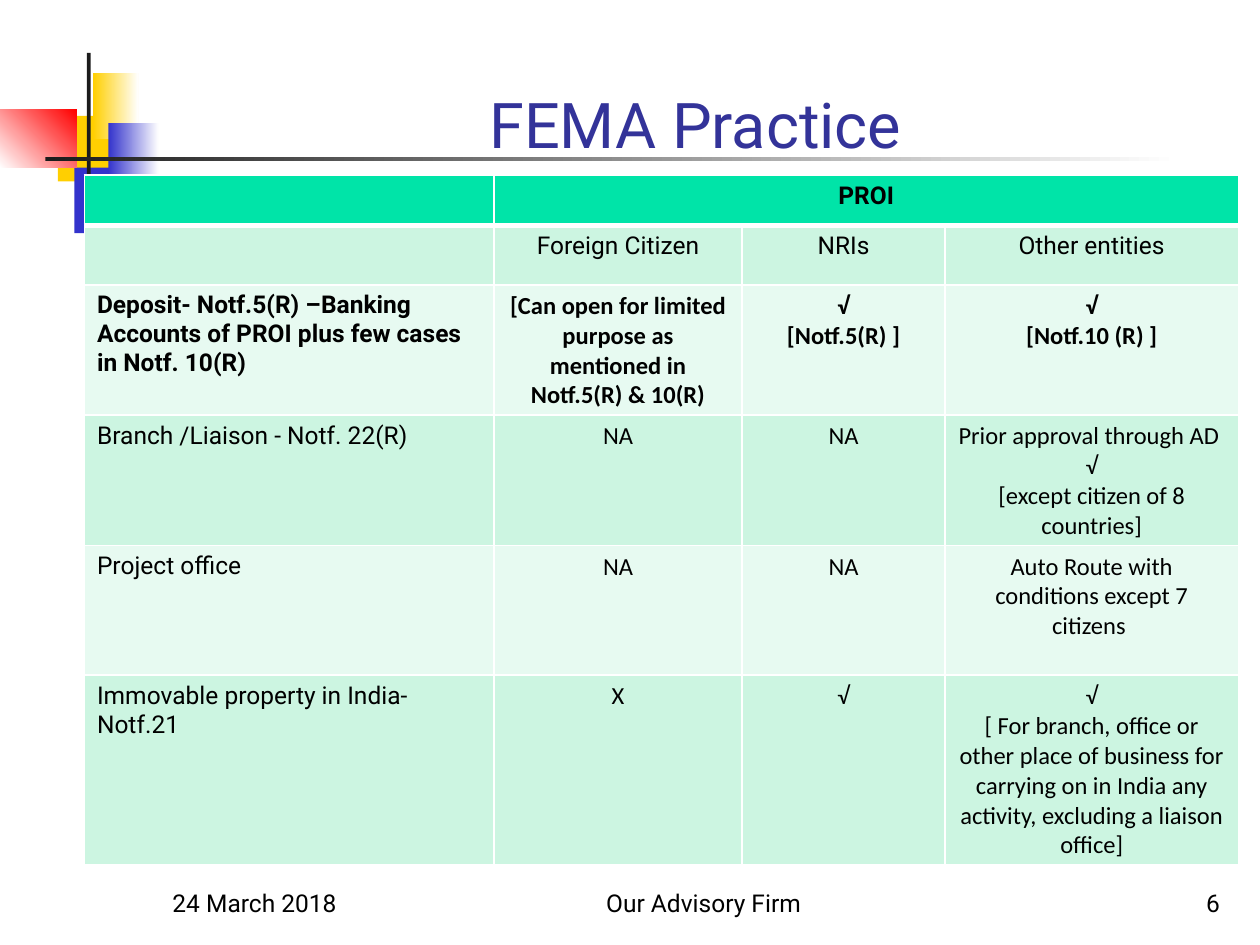
from lxml import etree
from pptx import Presentation
from pptx.dml.color import RGBColor
from pptx.enum.shapes import MSO_SHAPE
from pptx.enum.text import MSO_ANCHOR, PP_ALIGN
from pptx.oxml.ns import qn
from pptx.util import Inches, Pt

RECT = MSO_SHAPE.RECTANGLE
BOTTOM = MSO_ANCHOR.BOTTOM
LEFT, CENTER, RIGHT = PP_ALIGN.LEFT, PP_ALIGN.CENTER, PP_ALIGN.RIGHT
WHITE = RGBColor(0xFF, 0xFF, 0xFF)
BLACK = RGBColor(0x00, 0x00, 0x00)
YELLOW = RGBColor(0xFF, 0xCF, 0x01)
BLUE = RGBColor(0x33, 0x33, 0xCC)
RED = RGBColor(0xFF, 0x00, 0x00)
DARK = RGBColor(0x1C, 0x1C, 0x1C)
TITLE_BLUE = RGBColor(0x33, 0x33, 0x99)
HEADER_GREEN = RGBColor(0x00, 0xE4, 0xA8)
BAND_GREEN = RGBColor(0xCC, 0xF5, 0xE1)
PALE_GREEN = RGBColor(0xE7, 0xFA, 0xF1)


def write(tf, text, size=14, font="Roboto", color=BLACK, bold=False, align=LEFT):
    for i, line in enumerate(text.split("\n")):
        p = tf.paragraphs[0] if i == 0 else tf.add_paragraph()
        p.alignment = align
        r = p.add_run()
        r.text = line
        r.font.size = Pt(size)
        r.font.name = font
        r.font.bold = bold
        r.font.color.rgb = color


def add_border(cell, side, width):
    ln = etree.SubElement(cell._tc.get_or_add_tcPr(), qn(f"a:ln{side}"), w=str(Pt(width)))
    fill = etree.SubElement(ln, qn("a:solidFill"))
    etree.SubElement(fill, qn("a:srgbClr"), val=str(WHITE))


prs = Presentation()
prs.slide_width, prs.slide_height = Inches(10), Inches(7.5)
s = prs.slides.add_slide(prs.slide_layouts[5])

ornaments = [
    (0.46, 0.92, 0.48, 0.52, YELLOW, None, 0),
    (0.59, 1.33, 0.46, 0.52, BLUE, None, 0),
    (0.74, 0.58, 0.36, 0.52, YELLOW, WHITE, 0),
    (0.86, 0.98, 0.4, 0.52, BLUE, WHITE, 0),
    (0, 0.87, 0.61, 0.46, WHITE, RED, 45),
    (0.69, 0.42, 0.03, 1.15, DARK, None, 0),
    (0.36, 1.25, 9, 0.03, DARK, WHITE, 0),
]
for x, y, w, h, start, end, angle in ornaments:
    sp = s.shapes.add_shape(RECT, Inches(x), Inches(y), Inches(w), Inches(h))
    sp.shadow.inherit = False
    sp.line.fill.background()
    if end is None:
        sp.fill.solid()
        sp.fill.fore_color.rgb = start
    else:
        sp.fill.gradient()
        sp.fill.gradient_angle = angle
        for stop, color, position in zip(sp.fill.gradient_stops, (start, end), (0, 1)):
            stop.color.rgb = color
            stop.position = position

footers = [
    (1.27, 2.08, "24 March 2018", LEFT),
    (4, 3.17, "Our Advisory Firm", CENTER),
    (7.7, 2.08, "6", RIGHT),
]
for x, w, text, align in footers:
    tf = s.shapes.add_textbox(Inches(x), Inches(6.83), Inches(w), Inches(0.5)).text_frame
    tf.word_wrap = True
    tf.vertical_anchor = BOTTOM
    write(tf, text, align=align)

title = s.shapes.title
title.left, title.top = Inches(1.26), Inches(0.23)
title.width, title.height = Inches(8.52), Inches(1.1)
title.text_frame.vertical_anchor = BOTTOM
write(title.text_frame, "FEMA Practice", size=36, color=TITLE_BLUE, align=CENTER)

rows = [
    ("", "PROI", "", ""),
    ("", "Foreign Citizen", "NRIs", "Other entities"),
    ("Deposit- Notf.5(R) –Banking Accounts of PROI plus few cases in Notf. 10(R)",
     "[Can open for limited purpose as mentioned in Notf.5(R) & 10(R)",
     "√\n[Notf.5(R) ]", "√\n[Notf.10 (R) ]"),
    ("Branch /Liaison - Notf. 22(R)", "NA", "NA",
     "Prior approval through AD \n√\n[except citizen of 8 countries]"),
    ("Project office", "NA", "NA", "Auto Route with\nconditions except 7 citizens "),
    ("Immovable property in India- Notf.21", "X", "√",
     "√\n[ For branch, office or other place of business for carrying on in India "
     "any activity, excluding a liaison office]"),
]
col_widths = [3.25, 1.97, 1.61, 2.33]
row_heights = [0.38, 0.47, 1.03, 1.03, 1.03, 1.48]
table = s.shapes.add_table(len(rows), len(col_widths), Inches(0.67), Inches(1.39),
                           Inches(sum(col_widths)), Inches(sum(row_heights))).table
for column, width in zip(table.columns, col_widths):
    column.width = Inches(width)
for row, height in zip(table.rows, row_heights):
    row.height = Inches(height)
table.cell(0, 1).merge(table.cell(0, 3))

for i, texts in enumerate(rows):
    for j, text in enumerate(texts):
        cell = table.cell(i, j)
        for side in "LRTB":
            heavy = (i, side) in ((0, "B"), (1, "T"))
            add_border(cell, side, 3 if heavy else 1)
        cell.fill.solid()
        band = PALE_GREEN if i % 2 == 0 else BAND_GREEN
        cell.fill.fore_color.rgb = HEADER_GREEN if i == 0 else band
        if not cell.is_spanned:
            write(cell.text_frame, text, bold=i in (0, 2),
                  font="Calibri" if i > 1 and j > 0 else "Roboto",
                  align=CENTER if j > 0 else LEFT)

prs.save("out.pptx")
